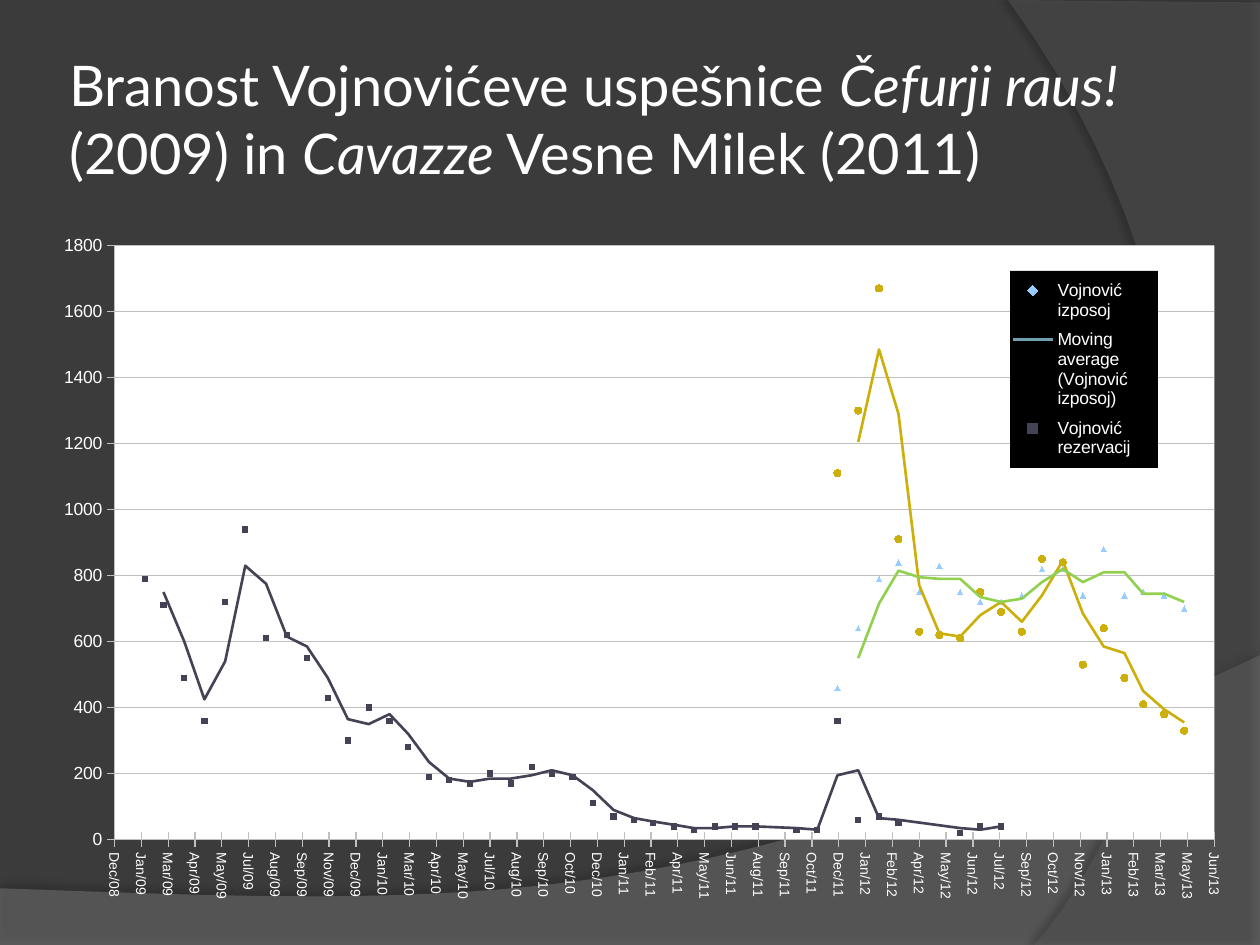
from itertools import accumulate

from pptx import Presentation
from pptx.chart.data import XyChartData
from pptx.dml.color import RGBColor
from pptx.enum.chart import (XL_CHART_TYPE, XL_LEGEND_POSITION, XL_MARKER_STYLE,
                             XL_TICK_LABEL_POSITION, XL_TICK_MARK)
from pptx.enum.text import MSO_ANCHOR, MSO_AUTO_SIZE, PP_ALIGN
from pptx.oxml import parse_xml
from pptx.oxml.ns import nsdecls, qn
from pptx.util import Inches, Pt

WHITE = RGBColor(0xFF, 0xFF, 0xFF)
BLACK = RGBColor(0, 0, 0)
DARK = RGBColor(0x3B, 0x3B, 0x3B)
GRAY = RGBColor(0x7F, 0x7F, 0x7F)
STONE = RGBColor(0x5E, 0x5E, 0x5E)
RULE = RGBColor(0xC0, 0xC0, 0xC0)
SKY = RGBColor(0x99, 0xCC, 0xFF)
TEAL = RGBColor(0x6E, 0xA0, 0xB0)
PLUM = RGBColor(0x44, 0x42, 0x55)
LIME = RGBColor(0x92, 0xD0, 0x50)
GOLD = RGBColor(0xCC, 0xAF, 0x0A)

# Month starts as day numbers, February 2009 to May 2013
YEAR = [28, 31, 30, 31, 30, 31, 31, 30, 31, 30, 31, 31]
DAYS = (YEAR * 3 + [29] + YEAR[1:] + YEAR)[:51]
MONTHS = list(accumulate(DAYS, initial=39845))

# Name, first month, values, marker, size, marker colour, trend colour
LOANS = [
    ("Vojnović izposoj", 0,
     [430, 560, 490, 470, 560, 590, 550, 670, 670, 660, 610, 650, 590, 670, 550,
      550, 570, 550, 540, 590, 580, 570, 520, 520, 440, 440, 390, 360, 420, 450,
      420, None, 410, 410, 410, 460, 510, 400, None, None, 400, 470, 400],
     XL_MARKER_STYLE.DIAMOND, 3, SKY, TEAL),
    ("Vojnović rezervacij", 0,
     [790, 710, 490, 360, 720, 940, 610, 620, 550, 430, 300, 400, 360, 280, 190,
      180, 170, 200, 170, 220, 200, 190, 110, 70, 60, 50, 40, 30, 40, 40,
      40, None, 30, 30, 360, 60, 70, 50, None, None, 20, 40, 40],
     XL_MARKER_STYLE.SQUARE, 3, PLUM, PLUM),
    ("Milek izposoj", 18,
     [None] * 16 + [460, 640, 790, 840, 750, 830, 750, 720, 720, 740, 820, 820,
                    740, 880, 740, 750, 740, 700],
     XL_MARKER_STYLE.TRIANGLE, 3, SKY, LIME),
    ("Milek rezervacij", 18,
     [None] * 16 + [1110, 1300, 1670, 910, 630, 620, 610, 750, 690, 630, 850, 840,
                    530, 640, 490, 410, 380, 330],
     XL_MARKER_STYLE.CIRCLE, 4, GOLD, GOLD),
]


def node(tag, body):
    return parse_xml(f"<{tag} {nsdecls('c', 'a')}>{body}</{tag}>")


def layout(x, y, w, h, inner=False):
    target = '<c:layoutTarget val="inner"/>' if inner else ""
    modes = '<c:xMode val="edge"/><c:yMode val="edge"/>'
    sizes = "".join(f'<c:{k} val="{v}"/>' for k, v in zip("xywh", (x, y, w, h)))
    return node("c:layout", f"<c:manualLayout>{target}{modes}{sizes}</c:manualLayout>")


def solid(color):
    return node("c:spPr", f'<a:solidFill><a:srgbClr val="{color}"/></a:solidFill>')


def curve(a, b, c, d, steps=32):
    """Points along a cubic curve, after its start."""
    for t in (i / steps for i in range(1, steps + 1)):
        u = 1 - t
        yield tuple(u**3 * p + 3 * u * u * t * q + 3 * u * t * t * r + t**3 * s
                    for p, q, r, s in zip(a, b, c, d))


class Deck:
    def __init__(self):
        self.show = Presentation()
        self.show.slide_width, self.show.slide_height = Inches(10), Inches(7.5)
        self.slide = self.show.slides.add_slide(self.show.slide_layouts[5])
        fill = self.slide.background.fill
        fill.solid()
        fill.fore_color.rgb = DARK

    def box(self, x, y, w, h):
        """Turn shares of the slide into lengths."""
        wide, high = self.show.slide_width, self.show.slide_height
        return int(x * wide), int(y * high), int(w * wide), int(h * high)

    def sweep(self, points, color, alpha, shade, turn, rank):
        dots = [(Inches(x), Inches(y)) for x, y in points]
        pen = self.slide.shapes.build_freeform(*dots[0], scale=1.0)
        pen.add_line_segments(dots[1:], close=True)
        shape = pen.convert_to_shape()
        shape.fill.solid()
        shape.fill.fore_color.rgb = color
        shape.line.fill.background()
        tint = shape._element.spPr.find(qn("a:solidFill"))[0]
        tint.append(node("a:alpha", ""))
        tint[-1].set("val", str(alpha * 1000))
        shape._element.spPr.append(node("a:effectLst", (
            f'<a:outerShdw blurRad="{Pt(4)}" dist="{Pt(4)}" dir="{turn * 60000}">'
            f'<a:srgbClr val="000000"><a:alpha val="{shade * 1000}"/></a:srgbClr>'
            '</a:outerShdw>')))
        self.slide.shapes._spTree.insert(2 + rank, shape._element)

    def title(self, runs, *area):
        head = self.slide.shapes.title
        head.left, head.top, head.width, head.height = self.box(*area)
        frame = head.text_frame
        frame.word_wrap = True
        frame.auto_size = MSO_AUTO_SIZE.NONE
        frame.vertical_anchor = MSO_ANCHOR.MIDDLE
        frame.margin_left = frame.margin_right = Inches(0.05)
        para = frame.paragraphs[0]
        para.alignment = PP_ALIGN.LEFT
        para.font.size, para.font.name = Pt(32), "Lato"
        para.font.color.rgb = WHITE
        for text, slant in runs:
            run = para.add_run()
            run.text, run.font.italic = text, slant

    def scatter(self, rows, *area):
        data = XyChartData()
        for name, first, values, *_ in rows:
            line = data.add_series(name)
            days = MONTHS[first:]
            for day, value in zip(days, values + [None] * (len(days) - len(values))):
                line.add_data_point(day, value)
        chart = self.slide.shapes.add_chart(
            XL_CHART_TYPE.XY_SCATTER, *self.box(*area), data).chart
        chart.has_title = False
        chart.font.size, chart.font.name = Pt(10), "Arial"
        chart.font.color.rgb = WHITE
        chart.plots[0].vary_by_categories = False
        for line, row in zip(chart.plots[0].series, rows):
            self.trend(line, *row[3:])
        # Month labels of the first series are text
        names = chart.plots[0].series[0]._element.find(qn("c:xVal"))
        for old, new in (("c:numRef", "c:strRef"), ("c:numCache", "c:strCache")):
            for part in list(names.iter(qn(old))):
                part.tag = qn(new)
        for code in list(names.iter(qn("c:formatCode"))):
            code.getparent().remove(code)
        self.axis(chart.category_axis, 39800, 41440, 40, "mmm/yy", 8)
        self.axis(chart.value_axis, 0, 1800, 200, "General", 10)
        chart.category_axis.has_major_gridlines = False
        chart.category_axis.tick_label_position = XL_TICK_LABEL_POSITION.LOW
        chart.category_axis._element.xpath("c:txPr/a:bodyPr")[0].set("rot", "5400000")
        chart.value_axis.major_gridlines.format.line.color.rgb = RULE
        # Plot area
        plot = chart._chartSpace.chart.plotArea
        for old in plot.findall(qn("c:layout")):
            plot.remove(old)
        plot.insert(0, layout(0.066, 0.056, 0.916, 0.802, inner=True))
        plot.append(solid(WHITE))
        self.legend(chart)

    def trend(self, line, style, size, color, tone):
        line.format.line.fill.background()
        line.marker.style, line.marker.size = style, size
        line.marker.format.fill.solid()
        line.marker.format.fill.fore_color.rgb = color
        line.marker.format.line.fill.background()
        item = line._element
        for gap in item.xpath('.//c:pt[c:v="None"]'):
            gap.getparent().remove(gap)
        item.find(qn("c:xVal")).addprevious(node("c:trendline", (
            f'<c:spPr><a:ln w="{Pt(1.5)}"><a:solidFill><a:srgbClr val="{tone}"/>'
            '</a:solidFill></a:ln></c:spPr><c:trendlineType val="movingAvg"/>'
            '<c:period val="2"/><c:dispRSqr val="0"/><c:dispEq val="0"/>')))

    def axis(self, axis, low, high, step, form, size):
        axis.minimum_scale, axis.maximum_scale = low, high
        axis.major_unit = step
        axis.major_tick_mark = XL_TICK_MARK.CROSS
        axis.minor_tick_mark = XL_TICK_MARK.NONE
        axis.format.line.color.rgb = RULE
        labels = axis.tick_labels
        labels.number_format, labels.number_format_is_linked = form, False
        labels.font.size = Pt(size)
        labels.font.color.rgb = WHITE

    def legend(self, chart):
        chart.has_legend = True
        chart.legend.position = XL_LEGEND_POSITION.RIGHT
        chart.legend.include_in_layout = False
        item = chart.legend._element
        for old in item.findall(qn("c:layout")):
            item.remove(old)
        spot = item.find(qn("c:legendPos"))
        spot.addnext(layout(0.812, 0.09, 0.123, 0.266))
        for index in (7, 6, 5, 4):
            spot.addnext(node("c:legendEntry",
                              f'<c:idx val="{index}"/><c:delete val="1"/>'))
        item.find(qn("c:overlay")).addnext(solid(BLACK))
        chart.legend.font.size = Pt(10)
        chart.legend.font.color.rgb = WHITE


def main():
    deck = Deck()
    # Background sweeps
    wave = curve((10, 5.2), (5.59, 7.29), (3.91, 7.19), (0, 7.05))
    deck.sweep([(0, 7.05), (0, 7.5), (10, 7.5), (10, 5.2), *wave], GRAY, 45, 35, 270, 0)
    arc = curve((8.21, 7.5), (9.35, 6.19), (10.18, 3), (8, 0))
    deck.sweep([(10, 0.02), (10, 7.5), (8.21, 7.5), *arc], STONE, 40, 45, 180, 1)
    # Title
    deck.title([("Branost Vojnovićeve uspešnice ", False), ("Čefurji raus! ", True),
                ("(2009) in ", False), ("Cavazze", True),
                (" Vesne Milek (2011)", False)], 0.05, 0.04, 0.91, 0.17)
    # Loans and reservations by month
    deck.scatter(LOANS, 0.028, 0.216, 0.953, 0.784)
    deck.show.save("out.pptx")


if __name__ == "__main__":
    main()
